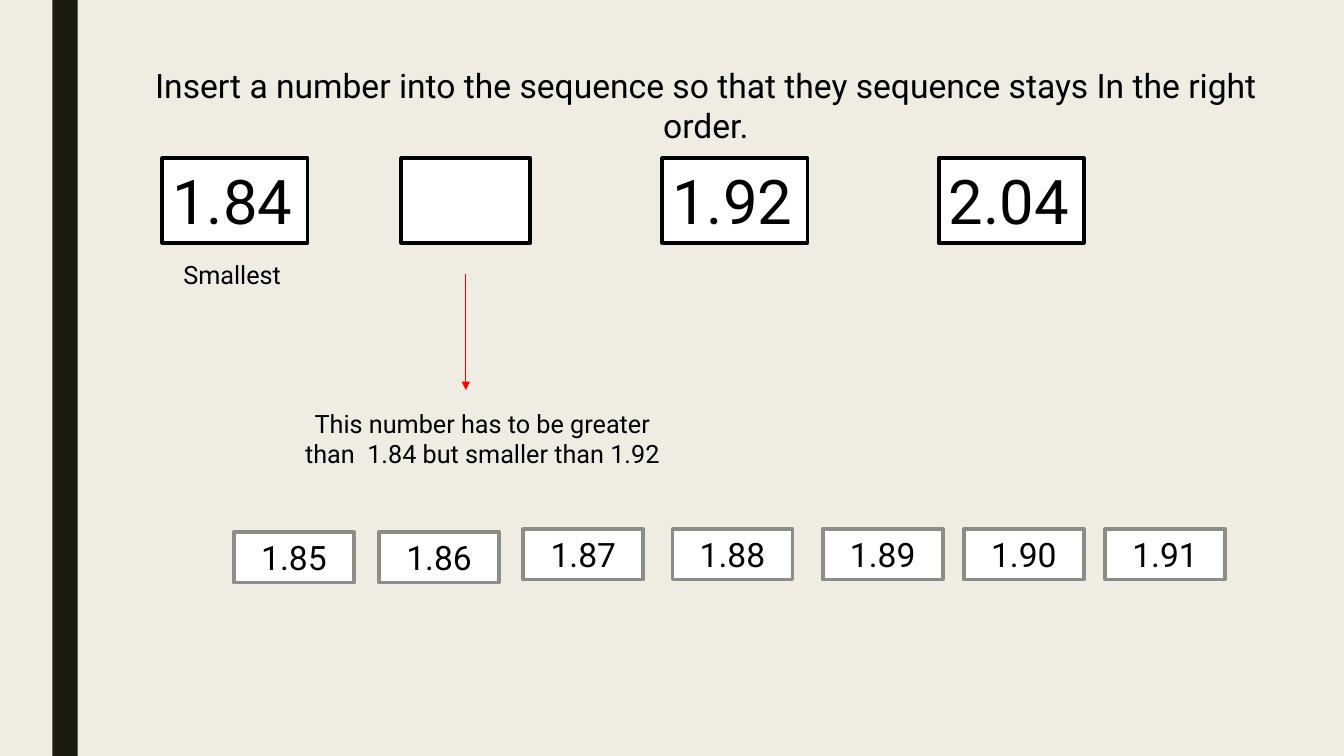
from lxml import etree
from pptx import Presentation
from pptx.dml.color import RGBColor
from pptx.enum import shapes, text
from pptx.oxml import ns
from pptx.util import Inches, Pt


def paint(color_format, hex_color):
    color_format.rgb = RGBColor.from_string(hex_color)


def add_block(left, top, width, height, words="", size=18, fill=None,
              border=None, centred=True, wrap=True):
    block = slide.shapes.add_shape(
        shapes.MSO_SHAPE.RECTANGLE,
        Inches(left), Inches(top), Inches(width), Inches(height),
    ) if fill else slide.shapes.add_textbox(
        Inches(left), Inches(top), Inches(width), Inches(height))
    if fill:
        block.shadow.inherit = False
        block.fill.solid()
        paint(block.fill.fore_color, fill)
        if border:
            paint(block.line.color, border)
            block.line.width = Pt(2.75)
        else:
            block.line.fill.background()
    if words:
        frame = block.text_frame
        frame.text = words
        frame.word_wrap = wrap
        frame.vertical_anchor = text.MSO_ANCHOR.TOP
        paragraph = frame.paragraphs[0]
        paragraph.alignment = text.PP_ALIGN.CENTER if centred else text.PP_ALIGN.LEFT
        font = paragraph.runs[0].font
        font.name = "Roboto"
        font.size = Pt(size)
        paint(font.color, "000000")


deck = Presentation()
deck.slide_width = Inches(13.33)
deck.slide_height = Inches(7.5)
slide = deck.slides.add_slide(deck.slide_layouts[6])
slide.background.fill.solid()
paint(slide.background.fill.fore_color, "EFEDE3")

add_block(0.52, 0, 0.25, 7.5, fill="191B0E")
add_block(1.14, 0.59, 11.72, 0.5,
          "Insert a number into the sequence so that they sequence stays In the right order.",
          size=24)
add_block(1.72, 2.52, 1.19, 0.4, "Smallest", centred=False, wrap=False)

sequence = [(1.61, 1.44, "1.84"), (3.98, 1.28, ""), (6.57, 1.44, "1.92"), (9.31, 1.44, "2.04")]
for left, width, number in sequence:
    add_block(left, 1.57, width, 0.84, number, size=44,
              fill="FFFFFF", border="000000", centred=False, wrap=False)

hint_arrow = slide.shapes.add_connector(
    shapes.MSO_CONNECTOR.STRAIGHT, Inches(4.62), Inches(2.72), Inches(4.62), Inches(3.87))
paint(hint_arrow.line.color, "FF0000")
hint_arrow.line.width = Pt(0.5)
etree.SubElement(hint_arrow.line._get_or_add_ln(), ns.qn("a:tailEnd"), type="triangle")
etree.SubElement(hint_arrow._element.spPr, ns.qn("a:effectLst"))

add_block(2.91, 4, 3.75, 0.71,
          "This number has to be greater than  1.84 but smaller than 1.92")

choice_places = [(2.32, 5.28), (3.76, 5.28), (5.19, 5.25), (6.67, 5.25),
                 (8.16, 5.25), (9.56, 5.25), (10.96, 5.25)]
for hundredths, (left, top) in enumerate(choice_places, start=185):
    add_block(left, top, 1.19, 0.5, f"{hundredths / 100:.2f}", size=24,
              fill="FFFFFF", border="8C8D86")

deck.save("out.pptx")
